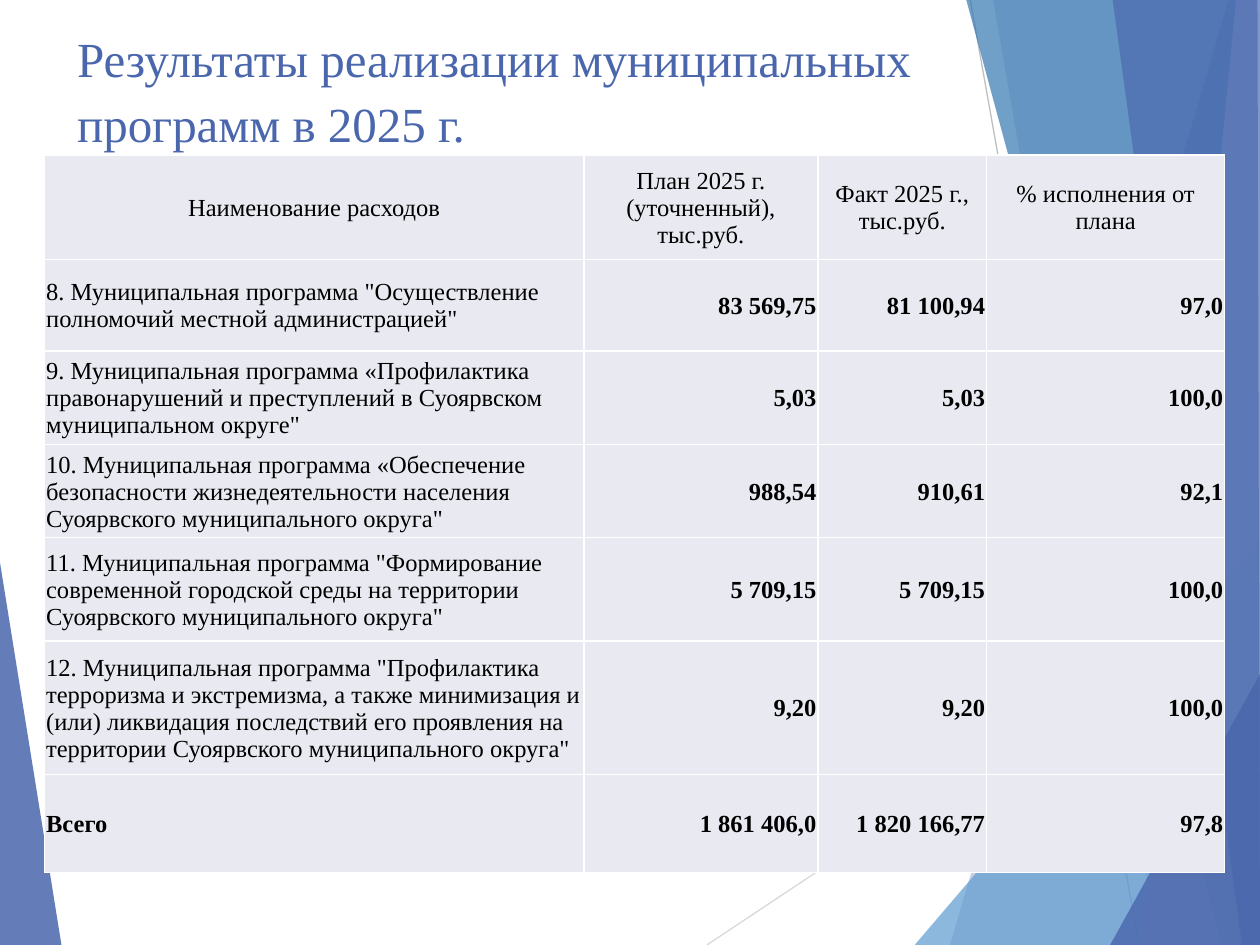
from dataclasses import dataclass

from lxml.etree import SubElement
from pptx import Presentation
from pptx.dml.color import RGBColor
from pptx.enum.shapes import MSO_CONNECTOR as Link
from pptx.enum.text import MSO_ANCHOR as Anchor, MSO_AUTO_SIZE as Fit, PP_ALIGN as Align
from pptx.oxml.ns import qn
from pptx.util import Cm, Pt


@dataclass(frozen=True)
class Theme:
    font: str = "Times New Roman"
    head: int = 28
    body: int = 14
    blue: str = "4A66AC"
    sky: str = "629DD1"
    deep: str = "3477B2"
    pale: str = "90A2CF"
    cell: str = "E9EAF1"
    ink: str = "000000"
    white: str = "FFFFFF"


THEME = Theme()
WIDE, HIGH = 25.4, 19.05

# Colour, opacity in percent, corners in cm
LEFT = (THEME.blue, 85, [(-0.03, 11.15), (1.24, HIGH), (-0.03, HIGH)])
RIGHT = [
    (THEME.blue, 30, [(24.77, 0), (19.15, HIGH), (WIDE, HIGH), (WIDE, 0)]),
    (THEME.blue, 20, [(20.02, 0), (23.34, HIGH), (WIDE, HIGH), (WIDE, 0)]),
    (THEME.sky, 72, [(18.44, HIGH), (WIDE, 10.9), (WIDE, HIGH)]),
    (THEME.deep, 70, [(19.48, 0), (24.64, HIGH), (WIDE, HIGH), (WIDE, 0)]),
    (THEME.pale, 70, [(24.92, 0), (23.04, HIGH), (WIDE, HIGH), (WIDE, 0)]),
    (THEME.blue, 65, [(22.43, 0), (25.04, HIGH), (WIDE, HIGH), (25.35, 0)]),
    (THEME.blue, 80, [(22.38, HIGH), (WIDE, 13.59), (WIDE, HIGH)]),
]
RAYS = [
    ("D9D9D9", (14.25, HIGH), (25.43, 11.61)),
    ("BFBFBF", (19.56, 0), (22.96, HIGH)),
]

TITLE = ["Результаты реализации муниципальных", "программ в 2025 г."]
COLS = [10.87, 4.72, 3.4, 4.8]
ROWS = [2.11, 1.85, 1.88, 1.88, 2.08, 2.69, 1.98]
DATA = [
    ("Наименование расходов", "План 2025 г.\n(уточненный),\nтыс.руб.",
     "Факт 2025 г.,\nтыс.руб.", "% исполнения от плана"),
    ('8. Муниципальная программа "Осуществление полномочий местной администрацией"',
     "83 569,75", "81 100,94", "97,0"),
    ("9. Муниципальная программа «Профилактика правонарушений и преступлений "
     'в Суоярвском муниципальном округе"', "5,03", "5,03", "100,0"),
    ("10. Муниципальная программа «Обеспечение безопасности жизнедеятельности "
     'населения Суоярвского муниципального округа"', "988,54", "910,61", "92,1"),
    ('11. Муниципальная программа "Формирование современной городской среды '
     'на территории Суоярвского муниципального округа"',
     "5 709,15", "5 709,15", "100,0"),
    ('12. Муниципальная программа "Профилактика терроризма и экстремизма, '
     "а также минимизация и (или) ликвидация последствий его проявления "
     'на территории Суоярвского муниципального округа"', "9,20", "9,20", "100,0"),
    ("Всего", "1 861 406,0", "1 820 166,77", "97,8"),
]


def rgb(code):
    return RGBColor.from_string(code)


def add_run(para, text, size, color, bold=False):
    run = para.add_run()
    run.text = text
    font = run.font
    font.name, font.size, font.bold = THEME.font, Pt(size), bold
    font.color.rgb = rgb(color)


def add_facet(slide, color, alpha, dots):
    """Draw a see-through polygon without an outline."""
    first, *rest = [(Cm(x), Cm(y)) for x, y in dots]
    pen = slide.shapes.build_freeform(*first)
    pen.add_line_segments(rest, close=True)
    shape = pen.convert_to_shape()
    shape.shadow.inherit = False
    shape.line.fill.background()
    shape.fill.solid()
    shape.fill.fore_color.rgb = rgb(color)
    tint = next(shape.element.spPr.iter(qn("a:srgbClr")))
    SubElement(tint, qn("a:alpha"), val=str(alpha * 1000))


def add_ray(slide, color, start, end):
    ends = [Cm(v) for v in start + end]
    ray = slide.shapes.add_connector(Link.STRAIGHT, *ends)
    ray.line.color.rgb = rgb(color)
    ray.line.width = Pt(0.75)
    SubElement(ray.element.spPr, qn("a:effectLst"))


def add_edges(cell):
    """Give a cell white borders on all four sides."""
    props = cell._tc.get_or_add_tcPr()
    for side in "LRTB":
        edge = SubElement(props, qn(f"a:ln{side}"), w=str(Pt(1)))
        fill = SubElement(edge, qn("a:solidFill"))
        SubElement(fill, qn("a:srgbClr"), val=THEME.white)


def fill_cell(cell, text, align, bold):
    cell.vertical_anchor = Anchor.MIDDLE
    cell.margin_left = cell.margin_right = cell.margin_top = Cm(0.03)
    cell.margin_bottom = 0
    add_edges(cell)
    cell.fill.solid()
    cell.fill.fore_color.rgb = rgb(THEME.cell)
    frame = cell.text_frame
    for i, line in enumerate(text.split("\n")):
        para = frame.add_paragraph() if i else frame.paragraphs[0]
        para.alignment = align
        add_run(para, line, THEME.body, THEME.ink, bold)


def add_grid(slide):
    frame = slide.shapes.add_table(len(ROWS), len(COLS), Cm(0.9), Cm(3.12),
                                   Cm(sum(COLS)), Cm(sum(ROWS)))
    table = frame.table
    table.first_row = table.horz_banding = False
    for col, width in zip(table.columns, COLS):
        col.width = Cm(width)
    for row, height in zip(table.rows, ROWS):
        row.height = Cm(height)
    last = len(DATA) - 1
    for r, texts in enumerate(DATA):
        for c, text in enumerate(texts):
            align = Align.CENTER if r == 0 else Align.RIGHT if c else Align.LEFT
            bold = r == last or (r > 0 and c > 0)
            fill_cell(table.cell(r, c), text, align, bold)


def set_title(slide):
    title = slide.shapes.title
    title.left, title.top = Cm(1.3), Cm(0.33)
    title.width, title.height = Cm(22.4), Cm(1.32)
    frame = title.text_frame
    frame.word_wrap = True
    frame.auto_size = Fit.NONE
    frame.vertical_anchor = Anchor.TOP
    para = frame.paragraphs[0]
    para.alignment = Align.LEFT
    para.line_spacing = 1.1
    for i, line in enumerate(TITLE):
        if i:
            para.add_line_break()
        add_run(para, line, THEME.head, THEME.blue)
    title.element.getparent().append(title.element)  # bring to front


def main():
    deck = Presentation()
    deck.slide_width, deck.slide_height = Cm(WIDE), Cm(HIGH)
    slide = deck.slides.add_slide(deck.slide_layouts[5])
    add_facet(slide, *LEFT)
    for ray in RAYS:
        add_ray(slide, *ray)
    for facet in RIGHT:
        add_facet(slide, *facet)
    add_grid(slide)
    set_title(slide)
    deck.save("out.pptx")


if __name__ == "__main__":
    main()
